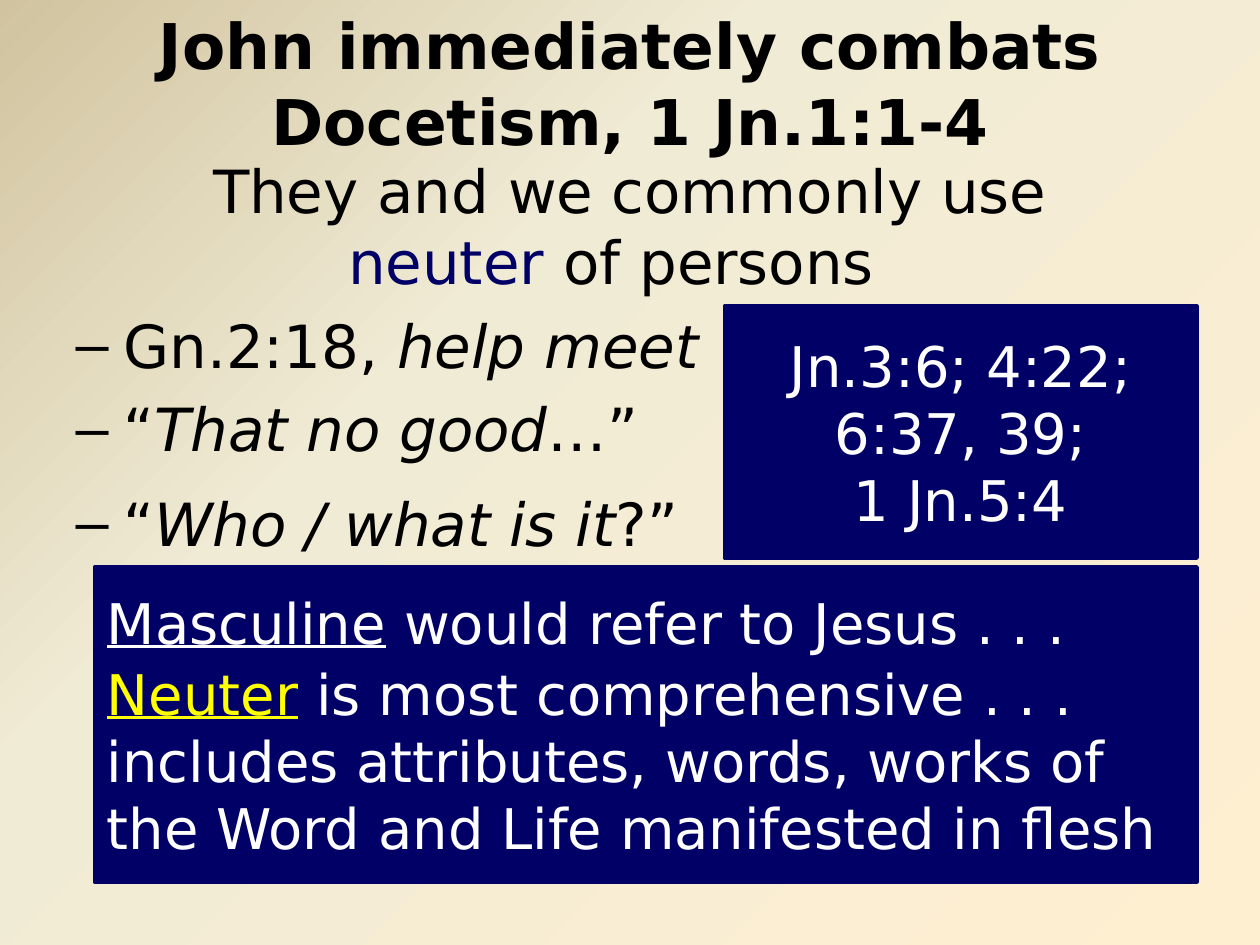
from lxml import etree
from pptx import Presentation
from pptx.dml.color import RGBColor
from pptx.enum.shapes import MSO_SHAPE
from pptx.enum.text import MSO_ANCHOR, MSO_AUTO_SIZE, PP_ALIGN
from pptx.oxml.ns import qn
from pptx.util import Inches, Pt

RECT = MSO_SHAPE.RECTANGLE
MIDDLE, TOP = MSO_ANCHOR.MIDDLE, MSO_ANCHOR.TOP
LEFT, CENTER = PP_ALIGN.LEFT, PP_ALIGN.CENTER
NO_FIT = MSO_AUTO_SIZE.NONE

FONT = "DejaVu Sans"
BLACK, WHITE, NAVY, YELLOW = "000000", "FFFFFF", "000066", "FFFF00"
BACKGROUND_STOPS = [(0, "D1C39F"), (35, "F0EBD5"), (100, "FFEFD1")]


def rgb(color):
    return RGBColor.from_string(color)


def set_background(s):
    fill = s.background.fill
    fill.gradient()
    grad = s.background._cSld.find(".//" + qn("a:gradFill"))
    stops = grad.find(qn("a:gsLst"))
    for stop in list(stops):
        stops.remove(stop)
    for percent, color in BACKGROUND_STOPS:
        stop = etree.SubElement(stops, qn("a:gs"), pos=str(percent * 1000))
        etree.SubElement(stop, qn("a:srgbClr"), val=color)
    lin = grad.find(qn("a:lin"))
    lin.set("ang", str(45 * 60000))
    lin.set("scaled", "0")


def place(sp, left, top, width, height):
    sp.left, sp.top = Inches(left), Inches(top)
    sp.width, sp.height = Inches(width), Inches(height)


def next_paragraph(tf):
    """Return the empty first paragraph, or a new one once that is used."""
    return tf.add_paragraph() if tf.paragraphs[0].runs else tf.paragraphs[0]


def set_bullet(p, char=None, indent=0):
    pPr = p._p.get_or_add_pPr()
    pPr.set("marL", str(Inches(indent)))
    pPr.set("indent", str(-Inches(indent)))
    if char:
        etree.SubElement(pPr, qn("a:buChar"), char=char)
    else:
        etree.SubElement(pPr, qn("a:buNone"))


def add_runs(p, runs, size, color):
    """Add (text, format) runs; a newline in the text is a line break."""
    for text, style in runs:
        for i, line in enumerate(text.split("\n")):
            if i:
                p.add_line_break()
            if not line:
                continue
            r = p.add_run()
            r.text = line
            r.font.name, r.font.size = FONT, Pt(size)
            r.font.color.rgb = rgb(style.get("color", color))
            r.font.bold = style.get("bold", False)
            r.font.italic = style.get("italic", False)
            r.font.underline = style.get("underline", False)


def fill_title(sp):
    place(sp, 0.5, 0.07, 9, 1.17)
    tf = sp.text_frame
    tf.auto_size, tf.vertical_anchor = NO_FIT, MIDDLE
    p = tf.paragraphs[0]
    p.alignment = CENTER
    add_runs(p, [("John immediately combats Docetism, 1 Jn.1:1-4", {"bold": True})], 36, BLACK)


def fill_body(sp):
    place(sp, 0.5, 1.17, 9, 5.75)
    tf = sp.text_frame
    tf.auto_size, tf.vertical_anchor = NO_FIT, TOP
    p = next_paragraph(tf)
    set_bullet(p)
    p.alignment, p.space_before = CENTER, Pt(0)
    add_runs(p, [("They and we commonly use\n", {}), ("neuter ", {"color": NAVY}),
                 ("of persons  ", {})], 34, BLACK)

    italic = {"italic": True}
    examples = [
        ([("Gn.2:18, ", {}), ("help meet", italic)], 0),
        ([("“", {}), ("That no good", italic), ("…”", {})], 6),
        ([("“", {}), ("Who / what is it", italic), ("?”", {})], 6),
    ]
    for runs, space_after in examples:
        p = next_paragraph(tf)
        p.level = 1
        set_bullet(p, "–", 0.38)
        p.space_before, p.space_after = Pt(7), Pt(space_after)
        add_runs(p, runs, 34, BLACK)


def add_box(s, left, top, width, height, paragraphs, align, space_after=0):
    sp = s.shapes.add_shape(RECT, Inches(left), Inches(top), Inches(width), Inches(height))
    sp.shadow.inherit = False
    sp.fill.solid()
    sp.fill.fore_color.rgb = rgb(NAVY)
    sp.line.color.rgb = rgb(NAVY)
    sp.line.width = Pt(2)
    tf = sp.text_frame
    tf.word_wrap, tf.vertical_anchor = True, MIDDLE
    for runs in paragraphs:
        p = next_paragraph(tf)
        p.alignment = align
        add_runs(p, runs, 32, WHITE)
    tf.paragraphs[0].space_after = Pt(space_after)


def main():
    prs = Presentation()
    prs.slide_width, prs.slide_height = Inches(10), Inches(7.5)
    s = prs.slides.add_slide(prs.slide_layouts[1])
    set_background(s)
    fill_title(s.shapes.title)
    fill_body(s.placeholders[1])
    add_box(s, 5.75, 2.43, 3.75, 2,
            [[("Jn.3:6; 4:22;\n6:37, 39;\n1 Jn.5:4", {})]], CENTER)
    add_box(s, 0.75, 4.5, 8.75, 2.5, [
        [("Masculine", {"underline": True}), (" would refer to Jesus . . .", {})],
        [("Neuter", {"underline": True, "color": YELLOW}),
         (" is most comprehensive . . . includes attributes, words, works of "
          "the Word and Life manifested in flesh", {})],
    ], LEFT, space_after=2)
    prs.save("out.pptx")


if __name__ == "__main__":
    main()
